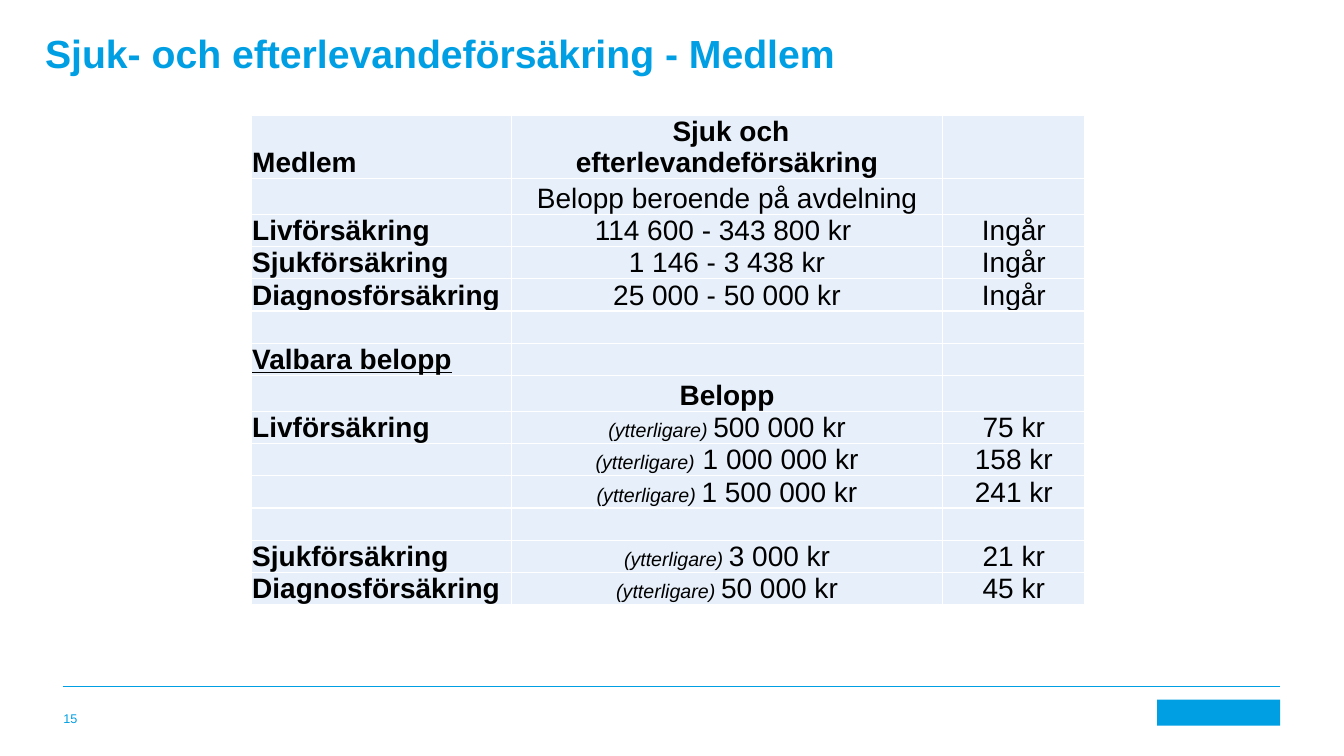
from dataclasses import dataclass

from lxml.etree import SubElement
from pptx import Presentation
from pptx.dml.color import RGBColor as Rgb
from pptx.enum.shapes import MSO_CONNECTOR as Connector, MSO_SHAPE as Preset
from pptx.enum.text import MSO_ANCHOR as Anchor, PP_ALIGN as Align
from pptx.oxml.ns import qn
from pptx.slide import Slide
from pptx.table import _Cell as Cell
from pptx.util import Pt

COLORS = {"blue": "009FE4", "pale": "E7F0FA", "white": "FFFFFF", "black": "000000"}
FONT = "Arial"
COLUMN_WIDTHS = (185.8, 308.2, 101.5)
ROW_HEIGHT = 23.05
TALL_ROWS = {0: 45, 1: 25.5, 7: 25.5}
LINE_SPACING = 22


@dataclass(frozen=True)
class Label:
    text: str
    left: float
    top: float
    width: float
    height: float
    size: float
    bold: bool = False
    anchor: Anchor = Anchor.TOP


@dataclass(frozen=True)
class Benefit:
    name: str = ""
    amount: str = ""
    price: str = ""
    prefix: str = ""
    heading: bool = False
    underline: bool = False


LABELS = (
    Label("Sjuk- och efterlevandeförsäkring - Medlem", 32.2, 20.9, 652, 62.6, 28, bold=True),
    Label("15", 45.2, 499.7, 41.8, 18.7, 9, anchor=Anchor.BOTTOM),
)

BENEFITS = (
    Benefit("Medlem", " Sjuk och efterlevandeförsäkring", heading=True),
    Benefit(amount="Belopp beroende på avdelning"),
    Benefit("Livförsäkring", "114 600 - 343 800 kr ", "Ingår"),
    Benefit("Sjukförsäkring", "1 146 - 3 438 kr", "Ingår"),
    Benefit("Diagnosförsäkring", "25 000 - 50 000 kr", "Ingår"),
    Benefit(),
    Benefit("Valbara belopp", underline=True),
    Benefit(amount="Belopp", heading=True),
    Benefit("Livförsäkring", "500 000 kr", "75 kr", "(ytterligare) "),
    Benefit(amount=" 1 000 000 kr", price="158 kr", prefix="(ytterligare)"),
    Benefit(amount="1 500 000 kr", price="241 kr", prefix="(ytterligare) "),
    Benefit(),
    Benefit("Sjukförsäkring", "3 000 kr", "21 kr", "(ytterligare) "),
    Benefit("Diagnosförsäkring", "50 000 kr", "45 kr", "(ytterligare) "),
)


def color(name: str) -> Rgb:
    return Rgb.from_string(COLORS[name])


def format_run(run, size: float, shade: str, bold: bool = False) -> None:
    run.font.name = FONT
    run.font.size = Pt(size)
    run.font.bold = bold
    run.font.color.rgb = color(shade)


def draw_label(slide: Slide, label: Label) -> None:
    box = slide.shapes.add_textbox(
        Pt(label.left), Pt(label.top), Pt(label.width), Pt(label.height))
    frame = box.text_frame
    frame.word_wrap = True
    frame.vertical_anchor = label.anchor
    frame.margin_left = frame.margin_right = frame.margin_top = frame.margin_bottom = 0
    frame.text = label.text
    format_run(frame.paragraphs[0].runs[0], label.size, "blue", label.bold)


def style_cell(cell: Cell) -> None:
    cell.margin_left = cell.margin_right = Pt(0.7)
    cell.margin_top = cell.margin_bottom = 0
    cell.vertical_anchor = Anchor.BOTTOM
    properties = cell._tc.get_or_add_tcPr()
    for side in ("lnL", "lnR", "lnT", "lnB"):
        border = SubElement(properties, qn(f"a:{side}"), w=str(Pt(1)))
        fill = SubElement(border, qn("a:solidFill"))
        SubElement(fill, qn("a:srgbClr"), val=COLORS["white"])
    cell.fill.solid()
    cell.fill.fore_color.rgb = color("pale")


def write_cell(cell: Cell, text: str, bold: bool = False, centred: bool = True,
               prefix: str = "", underline: bool = False) -> None:
    style_cell(cell)
    if not text:
        return
    paragraph = cell.text_frame.paragraphs[0]
    paragraph.alignment = Align.CENTER if centred else Align.LEFT
    paragraph.line_spacing = Pt(LINE_SPACING)
    paragraph.text = prefix or text
    if prefix:
        note = paragraph.runs[0]
        format_run(note, 14, "black")
        note.font.italic = True
        paragraph.add_run().text = text
    value = paragraph.runs[-1]
    format_run(value, 20, "black", bold)
    if underline:
        value.font.underline = True


def draw_benefits(slide: Slide) -> None:
    heights = [TALL_ROWS.get(row, ROW_HEIGHT) for row in range(len(BENEFITS))]
    table = slide.shapes.add_table(
        len(BENEFITS), len(COLUMN_WIDTHS), Pt(179.5), Pt(82.5),
        Pt(sum(COLUMN_WIDTHS)), Pt(sum(heights))).table
    table.first_row = table.horz_banding = False
    for column, width in zip(table.columns, COLUMN_WIDTHS):
        column.width = Pt(width)
    for row, height, benefit in zip(table.rows, heights, BENEFITS):
        row.height = Pt(height)
        name, amount, price = row.cells
        write_cell(name, benefit.name, bold=True, centred=False, underline=benefit.underline)
        write_cell(amount, benefit.amount, bold=benefit.heading, prefix=benefit.prefix)
        write_cell(price, benefit.price)


def draw_footer(slide: Slide) -> None:
    rule = slide.shapes.add_connector(
        Connector.STRAIGHT, Pt(45.2), Pt(490.3), Pt(914.4), Pt(490.3))
    rule.line.color.rgb = color("blue")
    rule.line.width = Pt(0.5)
    SubElement(rule._element.spPr, qn("a:effectLst"))
    # Plain block in the place of the sender's mark
    sender = slide.shapes.add_shape(
        Preset.RECTANGLE, Pt(826.6), Pt(499.7), Pt(87.8), Pt(18.7))
    sender.shadow.inherit = False
    sender.fill.solid()
    sender.fill.fore_color.rgb = color("blue")
    sender.line.fill.background()


def main() -> None:
    deck = Presentation()
    deck.slide_width, deck.slide_height = Pt(960), Pt(540)
    slide = deck.slides.add_slide(deck.slide_layouts[6])
    # Footer, title and page number, then the table
    draw_footer(slide)
    for label in LABELS:
        draw_label(slide, label)
    draw_benefits(slide)
    deck.save("out.pptx")


if __name__ == "__main__":
    main()
